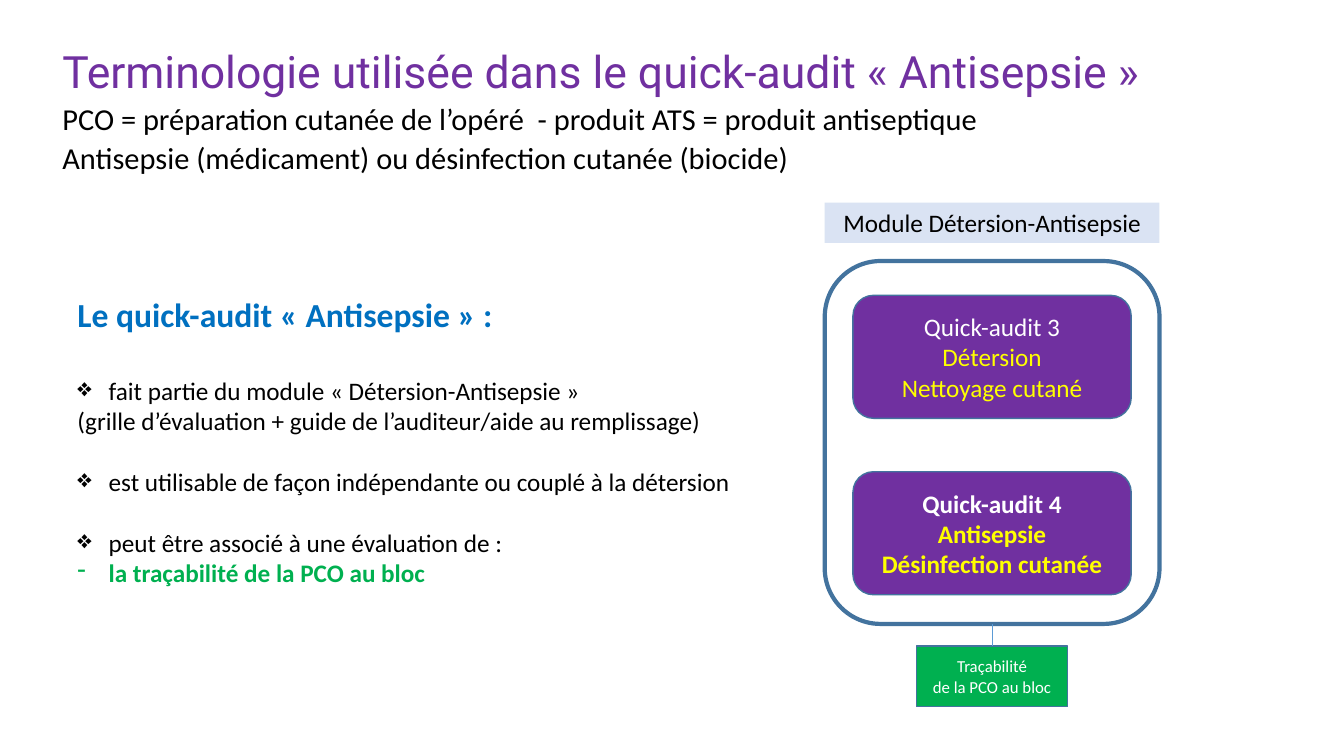
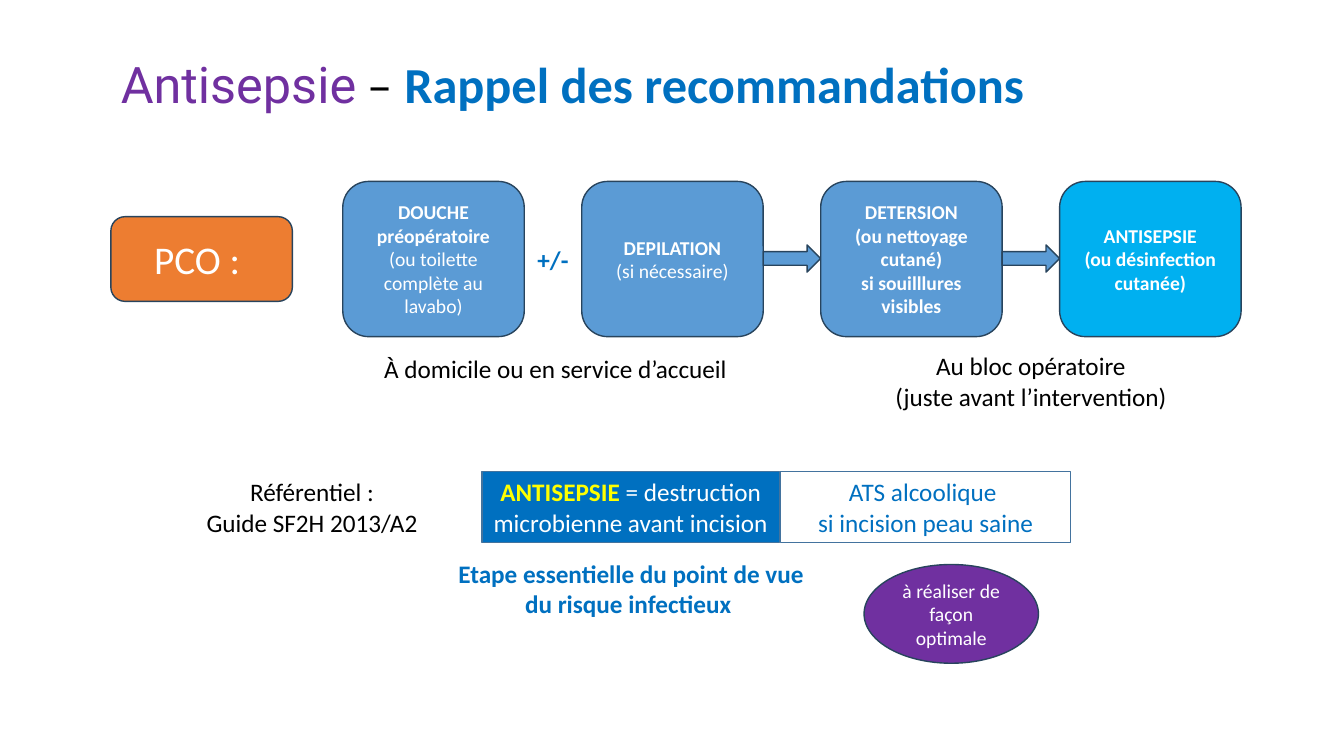
from lxml.etree import SubElement
from pptx import Presentation
from pptx.dml.color import RGBColor
from pptx.enum.shapes import MSO_CONNECTOR, MSO_SHAPE
from pptx.enum.text import MSO_ANCHOR, PP_ALIGN
from pptx.oxml.ns import qn
from pptx.util import Inches, Pt

# Shared colours and fonts
PURPLE, BLUE, GREEN, YELLOW = "7030A0", "0070C0", "00B050", "FFFF00"
STEP_BLUE, CYAN, ORANGE, PALE = "5B9BD5", "00B0F0", "ED7D31", "DAE3F3"
EDGE, DARK_EDGE, WHITE, BLACK = "43739E", "28445D", "FFFFFF", "000000"
BODY_FONT, TITLE_FONT = "Calibri", "Roboto"

# Content: a paragraph is a list of runs (text, style overrides)
BOLD, PLAIN, HILITE = {"bold": True}, {}, {"color": YELLOW}
BOLD_HILITE = {"bold": True, "color": YELLOW}
TITLE = {"font": TITLE_FONT, "color": PURPLE}

TERMS = [
    [("Terminologie utilisée dans le quick-audit «\u00a0Antisepsie\u00a0»", {**TITLE, "size": 31.8})],
    [("PCO = préparation cutanée de l’opéré  - produit ATS = produit antiseptique", PLAIN)],
    [("Antisepsie (médicament) ou désinfection cutanée (biocide)", PLAIN)],
]
# Text, style, bullet, space before in points
AUDIT_POINTS = [
    ("Le quick-audit «\u00a0Antisepsie\u00a0» :", {"bold": True, "color": BLUE, "size": 24}, None, 0),
    ("fait partie du module «\u00a0Détersion-Antisepsie\u00a0»", PLAIN, "❖", 29),
    ("(grille d’évaluation + guide de l’auditeur/aide au remplissage)", PLAIN, None, 0),
    ("est utilisable de façon indépendante ou couplé à la détersion", PLAIN, "❖", 22),
    ("peut être associé à une évaluation de :", PLAIN, "❖", 22),
    ("la traçabilité de la PCO au bloc", {"bold": True, "color": GREEN}, "-", 0),
]
AUDITS = [
    [[("Quick-audit 3", PLAIN)], [("Détersion", HILITE)], [("Nettoyage cutané", HILITE)]],
    [[("Quick-audit 4", BOLD)], [("Antisepsie", BOLD_HILITE)],
     [("Désinfection cutanée", BOLD_HILITE)]],
]
RECALL_TITLE = [[
    ("Antisepsie", TITLE),
    (" – ", PLAIN),
    ("Rappel des recommandations", {"bold": True, "color": BLUE}),
]]
STEPS = [
    (STEP_BLUE, [[("DOUCHE", BOLD)], [("préopératoire", BOLD)],
                 [("(ou toilette complète au lavabo)", PLAIN)]]),
    (STEP_BLUE, [[("DEPILATION", BOLD)], [("(si nécessaire)", PLAIN)]]),
    (STEP_BLUE, [[("DETERSION", BOLD)], [("(ou nettoyage cutané)", BOLD)],
                 [("si souilllures visibles", BOLD)]]),
    (CYAN, [[("ANTISEPSIE", BOLD)], [("(ou désinfection cutanée)", BOLD)]]),
]
DEFINITION = [[("ANTISEPSIE", BOLD_HILITE), (" = destruction microbienne avant incision", PLAIN)]]
# Left, top, width, height, lines
CAPTIONS = [
    (8.71, 3.43, 3.03, 0.71, ["Au bloc opératoire", "(juste avant l’intervention)"]),
    (3.69, 3.46, 3.64, 0.4, ["À domicile ou en service d’accueil"]),
    (1.8, 4.68, 2.59, 0.71, ["Référentiel :", "Guide SF2H 2013/A2"]),
]


def rgb(value):
    return RGBColor.from_string(value)


def lines(*texts, style=PLAIN):
    return [[(text, style)] for text in texts]


def write(sp, paras, size=18, color=BLACK, align=PP_ALIGN.CENTER, anchor=MSO_ANCHOR.MIDDLE):
    tf = sp.text_frame
    tf.word_wrap = True
    tf.vertical_anchor = anchor
    for i, runs in enumerate(paras):
        p = tf.add_paragraph() if i else tf.paragraphs[0]
        p.alignment = align
        for text, style in runs:
            r = p.add_run()
            r.text = text
            r.font.name = style.get("font", BODY_FONT)
            r.font.size = Pt(style.get("size", size))
            r.font.bold = style.get("bold", False)
            r.font.color.rgb = rgb(style.get("color", color))
    return tf


def add_text(s, x, y, w, h, paras, anchor=MSO_ANCHOR.TOP, **kw):
    sp = s.shapes.add_textbox(Inches(x), Inches(y), Inches(w), Inches(h))
    return write(sp, paras, anchor=anchor, **kw)


def add_box(s, kind, x, y, w, h, fill=None, line=None, weight=1, paras=(), color=WHITE, **kw):
    sp = s.shapes.add_shape(kind, Inches(x), Inches(y), Inches(w), Inches(h))
    sp.shadow.inherit = False
    if fill:
        sp.fill.solid()
        sp.fill.fore_color.rgb = rgb(fill)
    else:
        sp.fill.background()
    if line:
        sp.line.color.rgb = rgb(line)
        sp.line.width = Pt(weight)
    else:
        sp.line.fill.background()
    write(sp, paras, color=color, **kw)
    return sp


def set_bullet(p, char):
    pPr = p._p.get_or_add_pPr()
    pPr.set("marL", str(Inches(0.31)))
    pPr.set("indent", str(-Inches(0.31)))
    SubElement(pPr, qn("a:buChar")).set("char", char)


def link_down(s, upper, lower):
    cx = s.shapes.add_connector(MSO_CONNECTOR.STRAIGHT, 0, 0, 0, 0)
    cx.begin_connect(upper, 2)
    cx.end_connect(lower, 0)
    cx.line.color.rgb = rgb(STEP_BLUE)
    cx.line.width = Pt(0.5)
    SubElement(cx._element.spPr, qn("a:effectLst"))


def terminology_slide(s):
    # Title and definitions
    tf = add_text(s, 0.52, 0.53, 12.29, 1.29, TERMS, size=21.7, align=PP_ALIGN.LEFT)
    for p in tf.paragraphs:
        p.line_spacing = 0.7
        p.space_before = Pt(10)

    # Explanations
    paras = [[(text, style)] for text, style, _, _ in AUDIT_POINTS]
    tf = add_text(s, 0.67, 2.87, 7.13, 3.03, paras, align=PP_ALIGN.LEFT)
    for p, (_, _, bullet, gap) in zip(tf.paragraphs, AUDIT_POINTS):
        p.space_before = Pt(gap)
        if bullet:
            set_bullet(p, bullet)

    # Module diagram, centred on one axis
    axis = 9.84

    def centred(kind, y, w, h, **kw):
        return add_box(s, kind, axis - w / 2, y, w, h, **kw)

    centred(MSO_SHAPE.RECTANGLE, 2.01, 3.32, 0.4, fill=PALE, color=BLACK,
            paras=lines("Module Détersion-Antisepsie"))
    frame = centred(MSO_SHAPE.ROUNDED_RECTANGLE, 2.59, 3.32, 3.6, line=EDGE, weight=3)
    for i, paras in enumerate(AUDITS):
        centred(MSO_SHAPE.ROUNDED_RECTANGLE, 2.93 + 1.75 * i, 2.76, 1.22,
                fill=PURPLE, line=EDGE, paras=paras)
    tracing = centred(MSO_SHAPE.RECTANGLE, 6.41, 1.5, 0.6, fill=GREEN, line=EDGE, size=12,
                      paras=lines("Traçabilité", "de la PCO au bloc"))
    link_down(s, frame, tracing)


def recommendations_slide(s):
    tf = add_text(s, 1.1, 0.14, 11.5, 1.45, RECALL_TITLE, size=36,
                  align=PP_ALIGN.LEFT, anchor=MSO_ANCHOR.MIDDLE)
    tf.paragraphs[0].line_spacing = 0.9

    # Process chain
    left, top, w, h, pitch = 3.4, 1.8, 1.8, 1.54, 2.37
    gap = pitch - w
    add_box(s, MSO_SHAPE.ROUNDED_RECTANGLE, 1.1, 2.15, w, 0.84, fill=ORANGE, line=DARK_EDGE,
            size=28, paras=lines("PCO : "))
    for i, (fill, paras) in enumerate(STEPS):
        x = left + i * pitch
        add_box(s, MSO_SHAPE.ROUNDED_RECTANGLE, x, top, w, h, fill=fill, line=DARK_EDGE,
                size=14, paras=paras)
        if i == 0:
            add_text(s, x + w, 2.37, gap, 0.4, lines("+/-", style=BOLD), color=BLUE)
        elif i < len(STEPS) - 1:
            add_box(s, MSO_SHAPE.RIGHT_ARROW, x + w, 2.43, gap, 0.27,
                    fill=STEP_BLUE, line=DARK_EDGE)

    # Places and reference
    for x, y, width, height, texts in CAPTIONS:
        add_text(s, x, y, width, height, lines(*texts))

    # Definition and emphasis
    add_box(s, MSO_SHAPE.RECTANGLE, 4.78, 4.68, 2.95, 0.7, fill=BLUE, line=EDGE, paras=DEFINITION)
    add_box(s, MSO_SHAPE.RECTANGLE, 7.74, 4.68, 2.88, 0.7, line=EDGE, color=BLUE,
            paras=lines("ATS alcoolique ", "si incision peau saine"))
    add_box(s, MSO_SHAPE.ROUNDED_RECTANGLE, 4.39, 5.48, 3.74, 0.71, color=BLUE,
            paras=lines("Etape essentielle du point de vue du risque infectieux ", style=BOLD))
    add_box(s, MSO_SHAPE.OVAL, 8.57, 5.6, 1.73, 0.98, fill=PURPLE, line=DARK_EDGE, size=14,
            paras=lines("à réaliser de façon", "optimale"))


def main():
    prs = Presentation()
    prs.slide_width, prs.slide_height = Inches(13.33), Inches(7.5)
    for build in (terminology_slide, recommendations_slide):
        build(prs.slides.add_slide(prs.slide_layouts[6]))
    prs.save("out.pptx")


if __name__ == "__main__":
    main()
